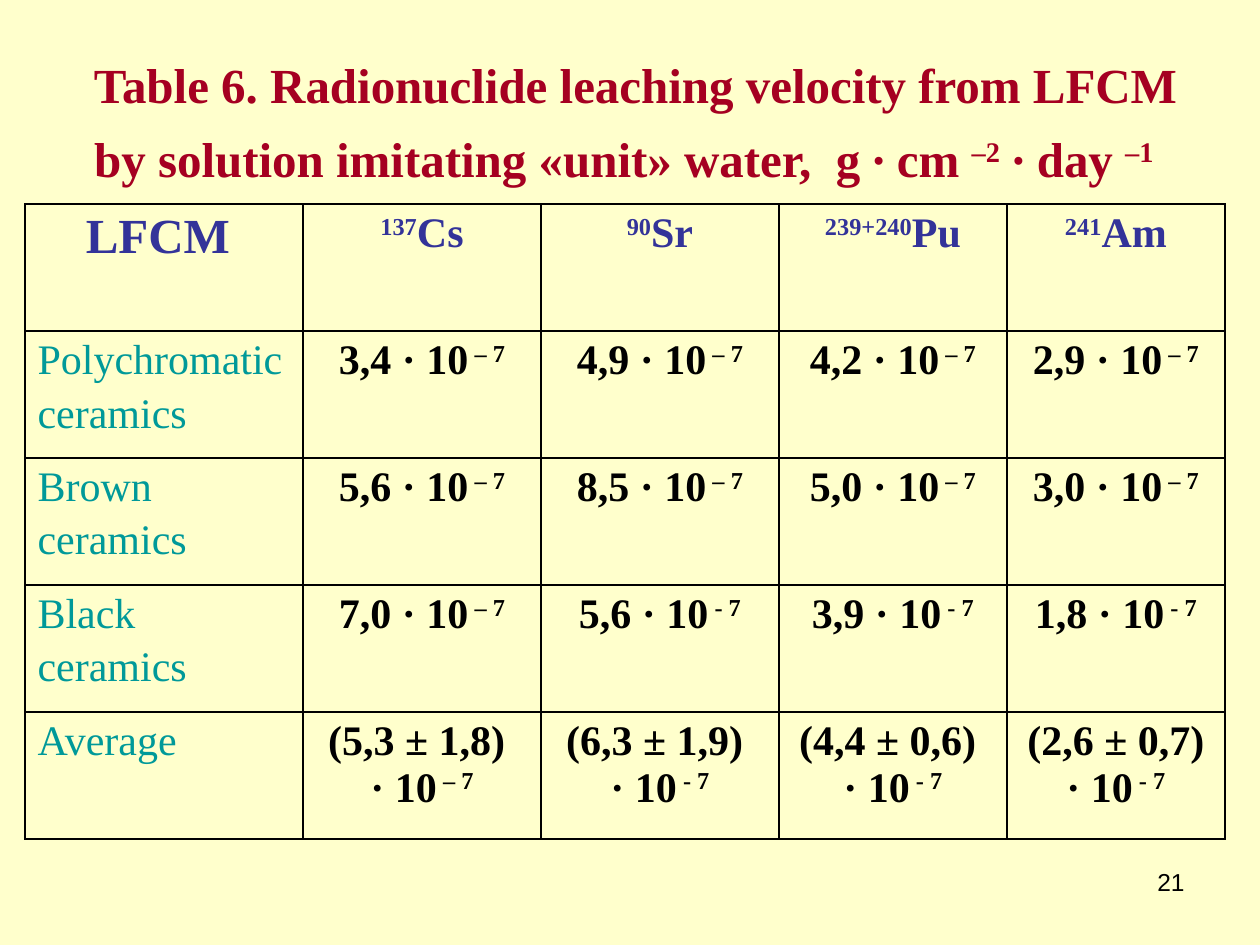
"""Build the slide with the table of radionuclide leaching velocities."""
from lxml import etree
from pptx import Presentation
from pptx.dml.color import RGBColor
from pptx.enum.text import MSO_ANCHOR, MSO_AUTO_SIZE, PP_ALIGN
from pptx.oxml.ns import qn
from pptx.util import Pt

PX = 914400 // 126
CENTER, LEFT, RIGHT = PP_ALIGN.CENTER, PP_ALIGN.LEFT, PP_ALIGN.RIGHT
MIDDLE = MSO_ANCHOR.MIDDLE
NO_AUTOFIT = MSO_AUTO_SIZE.NONE
CREAM = RGBColor(0xFF, 0xFF, 0xCC)
CRIMSON = RGBColor(0xA5, 0x00, 0x21)
INDIGO = RGBColor(0x33, 0x33, 0x99)
TEAL = RGBColor(0x00, 0x99, 0x99)
BLACK = RGBColor(0x00, 0x00, 0x00)
SERIF, SANS = "Times New Roman", "Arial"

COLUMN_WIDTHS = [278, 238, 238, 228, 218]
ROW_HEIGHT = 127
ROWS = [
    ["LFCM ", "^137^Cs", "^90^Sr", "^239+240^Pu", "^241^Am"],
    ["Polychromatic ceramics", "3,4 · 10^ – 7", "4,9 · 10^ – 7", "4,2 · 10^ – 7", "2,9 · 10^ – 7"],
    ["Brown ceramics", "5,6 · 10^ – 7", "8,5 · 10^ – 7", "5,0 · 10^ – 7", "3,0 · 10^ – 7"],
    ["Black ceramics", "7,0 · 10^ – 7", "5,6 · 10^ - 7", "3,9 · 10^ - 7", "1,8 · 10^ - 7"],
    ["Average", "(5,3 ± 1,8) \n· 10^ – 7", "(6,3 ± 1,9) \n· 10^ - 7",
     "(4,4 ± 0,6) \n· 10^ - 7", "(2,6 ± 0,7) · 10^ - 7"],
]


def add_text(paragraph, text, size, color, bold=True, font=SERIF):
    """Add runs to a paragraph; text between carets is superscript."""
    for index, part in enumerate(text.split("^")):
        if part:
            run = paragraph.add_run()
            run.text = part
            run.font.name = font
            run.font.size = Pt(size)
            run.font.bold = bold
            run.font.color.rgb = color
            if index % 2:
                run.font._element.set("baseline", "30000")


def add_borders(cell):
    """Draw a thin black line on each side of a cell."""
    properties = cell._tc.get_or_add_tcPr()
    for side in ("a:lnL", "a:lnR", "a:lnT", "a:lnB"):
        line = etree.SubElement(properties, qn(side), w=str(Pt(1)))
        fill = etree.SubElement(line, qn("a:solidFill"))
        etree.SubElement(fill, qn("a:srgbClr"), val=str(BLACK))


presentation = Presentation()
presentation.slide_width = 1260 * PX
presentation.slide_height = 945 * PX
slide = presentation.slides.add_slide(presentation.slide_layouts[5])
slide.background.fill.solid()
slide.background.fill.fore_color.rgb = CREAM

title = slide.shapes.title
title.left, title.top, title.width, title.height = 74 * PX, 26 * PX, 1123 * PX, 208 * PX
title.text_frame.auto_size = NO_AUTOFIT
title.text_frame.vertical_anchor = MIDDLE
heading = title.text_frame.paragraphs[0]
heading.alignment = CENTER
heading.line_spacing = 0.8
add_text(
    heading,
    "Table 6. Radionuclide leaching velocity from LFCM by solution imitating «unit» water,  "
    "g ∙ cm ^–2^ ∙ day ^–1",
    28, CRIMSON,
)
add_text(heading, " ", 48, BLACK, False, SANS)

table = slide.shapes.add_table(
    len(ROWS), len(COLUMN_WIDTHS), 25 * PX, 204 * PX,
    sum(COLUMN_WIDTHS) * PX, len(ROWS) * ROW_HEIGHT * PX,
).table
table.first_row = False
table.horz_banding = False
for column, width in zip(table.columns, COLUMN_WIDTHS):
    column.width = width * PX

for row_index, row in enumerate(ROWS):
    table.rows[row_index].height = ROW_HEIGHT * PX
    for column_index, text in enumerate(row):
        cell = table.cell(row_index, column_index)
        add_borders(cell)
        cell.fill.background()
        is_header = row_index == 0
        is_label = column_index == 0 and not is_header
        color = INDIGO if is_header else TEAL if is_label else BLACK
        size = 28 if is_header and column_index == 0 else 24
        for line_index, line_text in enumerate(text.split("\n")):
            frame = cell.text_frame
            paragraph = frame.add_paragraph() if line_index else frame.paragraphs[0]
            paragraph.alignment = LEFT if is_label else CENTER
            add_text(paragraph, line_text, size, color, not is_label)
            if is_label and text != "Average":
                add_text(paragraph, " ", 28, TEAL, False, SANS)

number_box = slide.shapes.add_textbox(903 * PX, 861 * PX, 294 * PX, 65 * PX)
number_box.text_frame.word_wrap = True
number = number_box.text_frame.paragraphs[0]
number.alignment = RIGHT
add_text(number, "21", 14, BLACK, False, SANS)

presentation.save("out.pptx")
